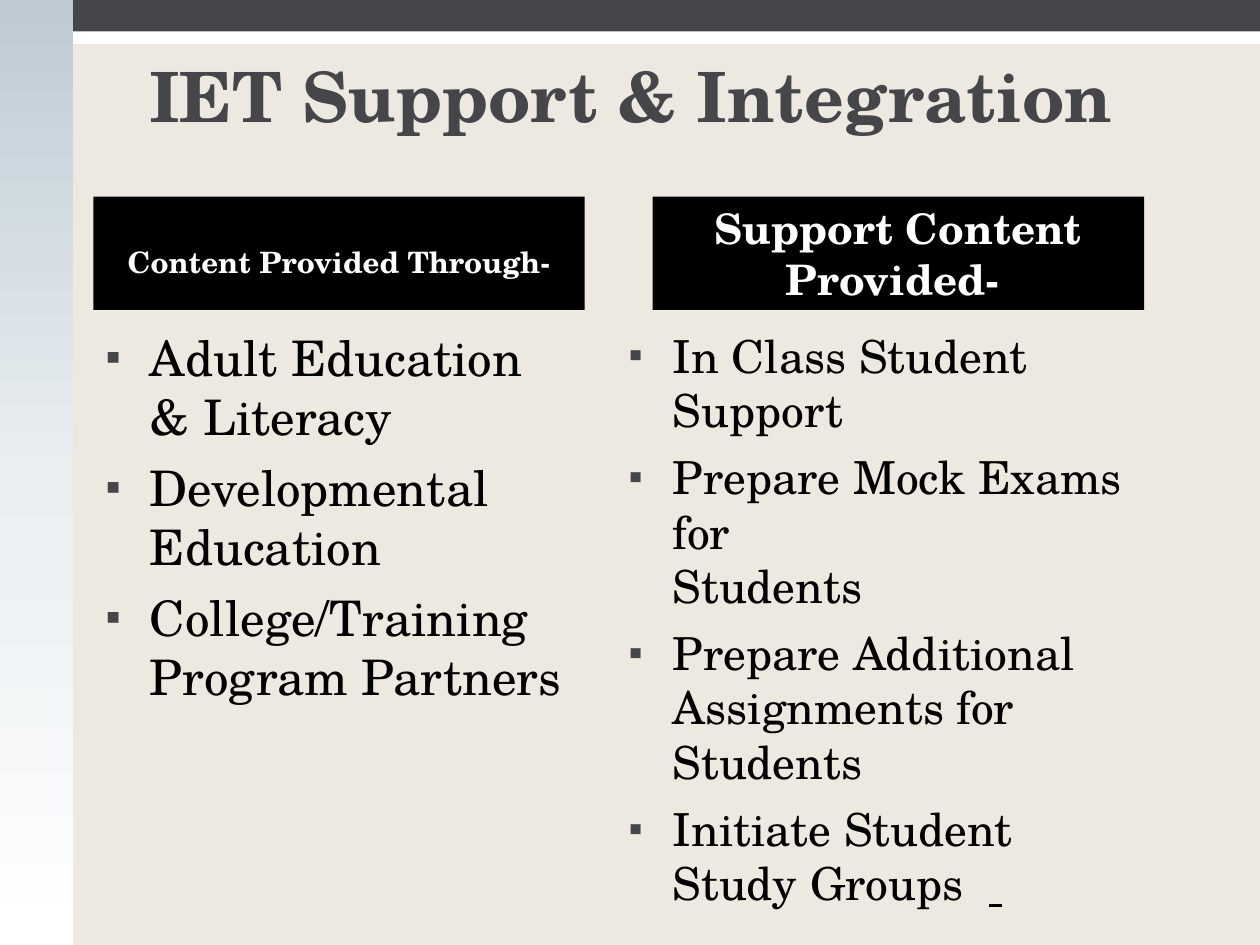
import copy
from dataclasses import dataclass

import pptx
import pptx.dml.color
import pptx.enum.shapes
import pptx.enum.text
import pptx.oxml
import pptx.oxml.ns
import pptx.util
from pptx.util import Inches

Anchor = pptx.enum.text.MSO_ANCHOR
Align = pptx.enum.text.PP_ALIGN


def rgb(code: str):
    return pptx.dml.color.RGBColor.from_string(code)


@dataclass(frozen=True)
class Theme:
    font: str = "TeX Gyre Schola"
    paper: str = "EDE9E1"
    slate: str = "46464A"
    white: str = "FFFFFF"
    black: str = "000000"
    strip: tuple = ((0, "BECBD5"), (0.5, "E9EEF1"), (1, "FFFFFF"))
    title_size: float = 39.6
    paragraph_gap: float = 7


@dataclass(frozen=True)
class Box:
    left: float
    top: float
    width: float
    height: float

    def lengths(self):
        return [Inches(v) for v in (self.left, self.top, self.width, self.height)]


@dataclass(frozen=True)
class Column:
    heading: str
    heading_box: Box
    heading_size: float
    heading_top_inset: float
    items: tuple
    list_box: Box
    list_size: float


THEME = Theme()
COLUMNS = (
    Column(
        "Content Provided Through-", Box(0.74, 1.56, 3.9, 0.9), 16.8, 0.19,
        ("Adult Education & Literacy", "Developmental Education",
         "College/Training Program Partners"),
        Box(0.74, 2.55, 3.9, 4.19), 28,
    ),
    Column(
        "Support Content Provided- ", Box(5.18, 1.56, 3.9, 0.9), 24, 0.05,
        ("In Class Student Support", "Prepare Mock Exams for \vStudents",
         "Prepare Additional Assignments for Students",
         "Initiate Student Study Groups  "),
        Box(4.89, 2.55, 4.17, 4.44), 26,
    ),
)


def add_band(slide, box: Box, color: str):
    band = slide.shapes.add_shape(
        pptx.enum.shapes.MSO_SHAPE.RECTANGLE, *box.lengths())
    band.shadow.inherit = False
    band.line.fill.background()
    band.fill.solid()
    band.fill.fore_color.rgb = rgb(color)
    return band


def fill_gradient(band, stops: tuple) -> None:
    band.fill.gradient()
    band.fill.gradient_angle = 270
    stop_list = band.fill._fill._gradFill.gsLst
    stop_list.insert(1, copy.deepcopy(stop_list[0]))
    for stop, (position, color) in zip(band.fill.gradient_stops, stops):
        stop.position = position
        stop.color.rgb = rgb(color)


def place(holder, box: Box, anchor):
    holder.left, holder.top, holder.width, holder.height = box.lengths()
    frame = holder.text_frame
    frame.word_wrap = True
    frame.auto_size = pptx.enum.text.MSO_AUTO_SIZE.NONE
    frame.vertical_anchor = anchor
    return frame


def style(paragraph, size: float, color: str, bold: bool, align) -> None:
    paragraph.alignment = align
    for run in paragraph.runs:
        run.font.name = THEME.font
        run.font.size = pptx.util.Pt(size)
        run.font.bold = bold
        run.font.color.rgb = rgb(color)


def add_bullet(paragraph) -> None:
    paragraph.space_before = pptx.util.Pt(THEME.paragraph_gap)
    properties = paragraph._p.get_or_add_pPr()
    properties.set("marL", str(Inches(0.35)))
    properties.set("indent", str(-Inches(0.35)))
    namespace = pptx.oxml.ns.nsdecls("a")
    for markup in (
        f'<a:buClr {namespace}><a:srgbClr val="{THEME.slate}"/></a:buClr>',
        f'<a:buSzPct {namespace} val="60000"/>',
        f'<a:buFont {namespace} typeface="{THEME.font}"/>',
        f'<a:buChar {namespace} char="▪"/>',
    ):
        properties.append(pptx.oxml.parse_xml(markup))


def fill_column(column: Column, heading, bullets) -> None:
    heading.fill.solid()
    heading.fill.fore_color.rgb = rgb(THEME.black)
    frame = place(heading, column.heading_box, Anchor.MIDDLE)
    frame.margin_top = Inches(column.heading_top_inset)
    frame.text = column.heading
    style(frame.paragraphs[0], column.heading_size, THEME.white, True, Align.CENTER)

    frame = place(bullets, column.list_box, Anchor.TOP)
    frame.text = "\n".join(column.items)
    for paragraph in frame.paragraphs:
        add_bullet(paragraph)
        style(paragraph, column.list_size, THEME.black, False, Align.LEFT)


def underline_end(bullets, size: float) -> None:
    paragraph = bullets.text_frame.paragraphs[-1]
    blank = paragraph.add_run()
    blank.text = " "
    blank.font.underline = True
    style(paragraph, size, THEME.black, False, Align.LEFT)


def main() -> None:
    deck = pptx.Presentation()
    deck.slide_width, deck.slide_height = Inches(10), Inches(7.5)
    slide = deck.slides.add_slide(deck.slide_layouts[4])
    slide.background.fill.solid()
    slide.background.fill.fore_color.rgb = rgb(THEME.paper)

    add_band(slide, Box(0, 0, 10, 0.35), THEME.white)
    side_strip = add_band(slide, Box(0, 0, 0.58, 7.5), THEME.white)
    fill_gradient(side_strip, THEME.strip)
    add_band(slide, Box(0.58, 0, 9.42, 0.25), THEME.slate)

    title = place(slide.shapes.title, Box(1.02, 0.4, 7.97, 0.7), Anchor.MIDDLE)
    title.text = "IET Support & Integration"
    style(title.paragraphs[0], THEME.title_size, THEME.slate, True, Align.CENTER)

    holders = slide.placeholders
    for column, first in zip(COLUMNS, (1, 3)):
        fill_column(column, holders[first], holders[first + 1])
    underline_end(holders[4], COLUMNS[-1].list_size)

    deck.save("out.pptx")


if __name__ == "__main__":
    main()
